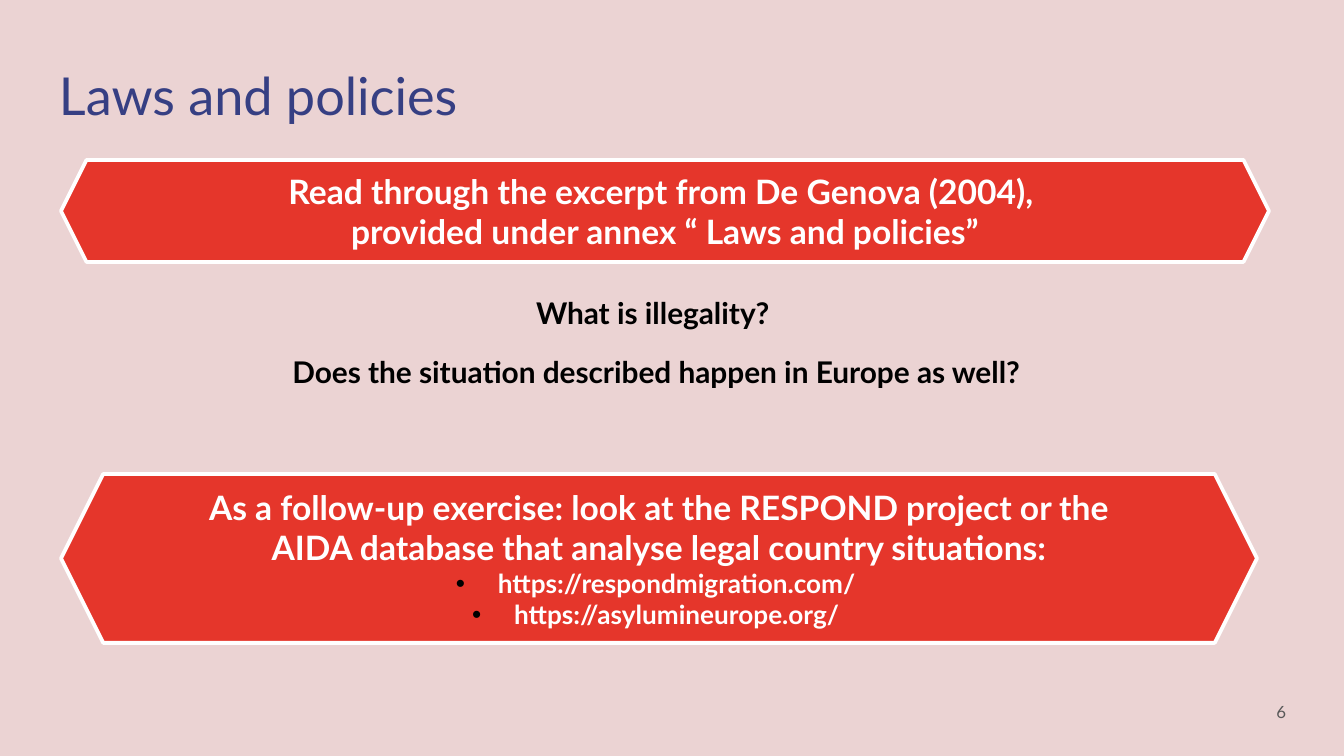
"""Build the "Laws and policies" slide with two hexagon banners and discussion questions."""
from lxml import etree
from pptx import Presentation
from pptx.dml.color import RGBColor
from pptx.enum.shapes import MSO_SHAPE
from pptx.enum.text import MSO_ANCHOR, MSO_AUTO_SIZE, PP_ALIGN
from pptx.oxml.ns import qn
from pptx.util import Emu, Pt

HEXAGON = MSO_SHAPE.HEXAGON
TOP, MIDDLE = MSO_ANCHOR.TOP, MSO_ANCHOR.MIDDLE
LEFT, CENTER, RIGHT = PP_ALIGN.LEFT, PP_ALIGN.CENTER, PP_ALIGN.RIGHT
NO_AUTOFIT = MSO_AUTO_SIZE.NONE

PINK = RGBColor(0xEB, 0xD3, 0xD3)
RED = RGBColor(0xE5, 0x36, 0x2B)
NAVY = RGBColor(0x36, 0x3F, 0x83)
GRAY = RGBColor(0x59, 0x59, 0x59)
WHITE = RGBColor(0xFF, 0xFF, 0xFF)
BLACK = RGBColor(0x00, 0x00, 0x00)

FONT = "Lato"
BULLET_INDENT = 42


def px(length):
    return Emu(round(length * 914400 / 134.4))


def write_text(shape, lines, size, color, align=CENTER, bold=True, anchor=TOP,
               inset=7, gap=0, bullets=(), bullet_size=14):
    frame = shape.text_frame
    frame.word_wrap = True
    frame.auto_size = NO_AUTOFIT
    frame.vertical_anchor = anchor
    frame.margin_left = frame.margin_right = px(13)
    frame.margin_top = frame.margin_bottom = px(inset)
    for index, line in enumerate([*lines, *bullets]):
        paragraph = frame.add_paragraph() if index else frame.paragraphs[0]
        paragraph.alignment = align
        paragraph.space_before = Pt(gap if index else 0)
        paragraph.space_after = Pt(gap)
        is_bullet = index >= len(lines)
        if is_bullet:
            properties = paragraph._p.get_or_add_pPr()
            properties.set("marL", str(px(BULLET_INDENT)))
            properties.set("indent", str(-px(BULLET_INDENT)))
            bullet_color = etree.SubElement(properties, qn("a:buClr"))
            etree.SubElement(bullet_color, qn("a:srgbClr"), val=str(BLACK))
            etree.SubElement(properties, qn("a:buFont"), typeface="Arial")
            etree.SubElement(properties, qn("a:buChar"), char="•")
        run = paragraph.add_run()
        run.text = line
        run.font.name = FONT
        run.font.size = Pt(bullet_size if is_bullet else size)
        run.font.bold = bold
        run.font.color.rgb = color


presentation = Presentation()
presentation.slide_width = px(1344)
presentation.slide_height = px(756)
slide = presentation.slides.add_slide(presentation.slide_layouts[5])
slide.background.fill.solid()
slide.background.fill.fore_color.rgb = PINK

title = slide.shapes.title
title.left, title.top, title.width, title.height = px(46), px(50), px(1000), px(85)
write_text(title, ["Laws and policies"], size=28, color=NAVY, align=LEFT, bold=False, inset=13)

page_number = slide.shapes.add_textbox(px(1218), px(683), px(81), px(58))
write_text(page_number, ["6"], size=9, color=GRAY, align=RIGHT, bold=False,
           anchor=MIDDLE, inset=13)

banners = [
    (160, 1208, 102,
     ["Read through the excerpt from De Genova (2004), ",
      "provided under annex “ Laws and policies”"], []),
    (474, 1196, 169,
     ["As a follow-up exercise: look at the RESPOND project or the "
      "AIDA database that analyse legal country situations:"],
     ["https://respondmigration.com/ ", "https://asylumineurope.org/ "]),
]
for top, width, height, lines, links in banners:
    banner = slide.shapes.add_shape(HEXAGON, px(61), px(top), px(width), px(height))
    banner.shadow.inherit = False
    banner.fill.solid()
    banner.fill.fore_color.rgb = RED
    banner.line.color.rgb = WHITE
    banner.line.width = Pt(2)
    write_text(banner, lines, size=18, color=WHITE, anchor=MIDDLE, bullets=links)

questions = slide.shapes.add_textbox(px(228), px(288), px(857), px(109))
write_text(questions,
           ["What is illegality? ", "Does the situation described happen in Europe as well?"],
           size=16, color=BLACK, gap=6)

presentation.save("out.pptx")
